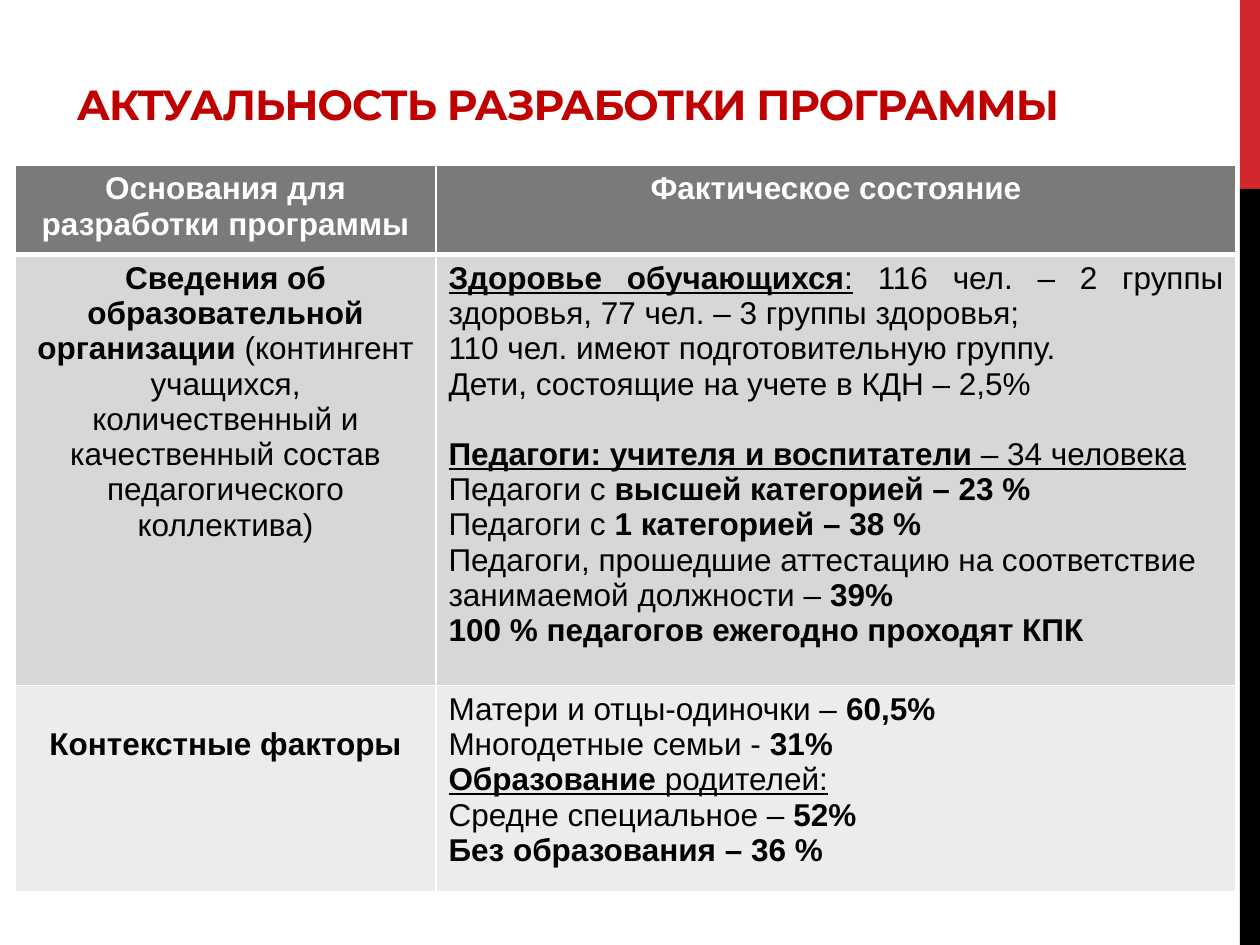
from lxml import etree
from pptx import Presentation
from pptx.dml.color import RGBColor
from pptx.enum.shapes import MSO_SHAPE
from pptx.enum.text import MSO_ANCHOR, PP_ALIGN
from pptx.oxml.ns import qn
from pptx.util import Inches, Pt

RECT = MSO_SHAPE.RECTANGLE
BOTTOM = MSO_ANCHOR.BOTTOM
LEFT, MID, JUST = PP_ALIGN.LEFT, PP_ALIGN.CENTER, PP_ALIGN.JUSTIFY
HUES = {"red": "D1282E", "black": "000000", "title": "C00000", "white": "FFFFFF",
        "head": "7A7A7A", "dark": "D7D7D7", "light": "ECECEC"}
LINE = 20  # height of one text line, in points


def hue(name):
    return RGBColor.from_string(HUES[name])


def edge(cell, sides):
    """Draw white cell borders; sides maps a tag to a width in points."""
    props = cell._tc.get_or_add_tcPr()
    for spot, (tag, width) in enumerate(sides.items()):
        line = etree.Element(qn(f"a:{tag}"), w=str(Pt(width)))
        fill = etree.SubElement(line, qn("a:solidFill"))
        etree.SubElement(fill, qn("a:srgbClr"), val=HUES["white"])
        props.insert(spot, line)


deck = Presentation()
deck.slide_width, deck.slide_height = Inches(10), Inches(7.5)
wide, high = deck.slide_width, deck.slide_height
slide = deck.slides.add_slide(deck.slide_layouts[6])

# Side band: one fifth red, the rest black
band = Inches(0.16)
for name, top, share in (("red", 0, 0.2), ("black", 0.2, 0.8)):
    bar = slide.shapes.add_shape(RECT, wide - band, int(high * top),
                                 band, int(high * share))
    bar.shadow.inherit = False
    bar.fill.solid()
    bar.fill.fore_color.rgb = hue(name)
    bar.line.fill.background()

# Title
box = slide.shapes.add_textbox(Inches(0.51), Inches(0.29), Inches(9.03), Inches(0.78))
frame = box.text_frame
frame.word_wrap = True
frame.vertical_anchor = BOTTOM
para = frame.paragraphs[0]
run = para.add_run()
run.text = "АКТУАЛЬНОСТЬ РАЗРАБОТКИ ПРОГРАММЫ"
run.font.size, run.font.bold, run.font.name = Pt(24), True, "Montserrat"
run.font.color.rgb = hue("title")
run._r.get_or_add_rPr().set("spc", "-60")

# Table text: row > cell > paragraph (align, lines skipped above, runs);
# a run is (text, marks), where b is bold and u is underlined
rows = [
    [[(MID, 0, [("Основания для разработки программы", "b")])],
     [(MID, 0, [("Фактическое состояние", "b")])]],
    [[(MID, 0, [("Сведения об образовательной организации ", "b"),
                ("(контингент учащихся, количественный и качественный состав "
                 "педагогического коллектива)", "")])],
     [(JUST, 0, [("Здоровье обучающихся", "bu"), (":", "u"),
                 (" 116 чел. – 2 группы здоровья, 77 чел. – 3 группы здоровья; ", "")]),
      (JUST, 0, [("110 чел. имеют подготовительную группу.", "")]),
      (LEFT, 0, [("Дети, состоящие на учете в КДН – 2,5%", "")]),
      (LEFT, 1, [("Педагоги:", "bu"), (" ", "u"), ("учителя и воспитатели ", "bu"),
                 ("– 34 человека", "u")]),
      (LEFT, 0, [("Педагоги с ", ""), ("высшей категорией – 23 %", "b")]),
      (LEFT, 0, [("Педагоги с ", ""), ("1 категорией – 38 %", "b")]),
      (LEFT, 0, [("Педагоги, прошедшие аттестацию на соответствие "
                  "занимаемой должности – ", ""), ("39%", "b")]),
      (LEFT, 0, [("100 % педагогов ежегодно проходят КПК", "b")])]],
    [[(MID, 1, [("Контекстные факторы", "b")])],
     [(LEFT, 0, [("Матери и отцы-одиночки – ", ""), ("60,5%", "b")]),
      (LEFT, 0, [("Многодетные семьи - ", ""), ("31%", "b")]),
      (LEFT, 0, [("Образование", "bu"), (" родителей:", "u")]),
      (LEFT, 0, [("Средне специальное – ", ""), ("52%", "b")]),
      (LEFT, 0, [("Без образования – 36 %", "b")])]],
]
cols = [3.34, 6.35]
tall = [0.71, 3.42, 1.64]
fills = ["head", "dark", "light"]

# Table
grid = slide.shapes.add_table(len(tall), len(cols), Inches(0.12), Inches(1.31),
                              Inches(sum(cols)), Inches(sum(tall))).table
for col, size in zip(grid.columns, cols):
    col.width = Inches(size)
for r, row in enumerate(rows):
    grid.rows[r].height = Inches(tall[r])
    for c, paras in enumerate(row):
        cell = grid.cell(r, c)
        cell.fill.solid()
        cell.fill.fore_color.rgb = hue(fills[r])
        edge(cell, {"lnL": 1, "lnR": 1, "lnT": 3 if r == 1 else 1,
                    "lnB": 3 if r == 0 else 1})
        for i, (align, skip, runs) in enumerate(paras):
            frame = cell.text_frame
            para = frame.add_paragraph() if i else frame.paragraphs[0]
            para.alignment = align
            if skip and i:
                para.space_before = Pt(LINE * skip)
            elif skip:
                cell.margin_top = Inches(0.05) + Pt(LINE * skip)
            for text, marks in runs:
                run = para.add_run()
                run.text = text
                font = run.font
                font.name, font.size = "Arial", Pt(18)
                font.bold, font.underline = "b" in marks, "u" in marks
                font.color.rgb = hue("black" if r else "white")

deck.save("out.pptx")
